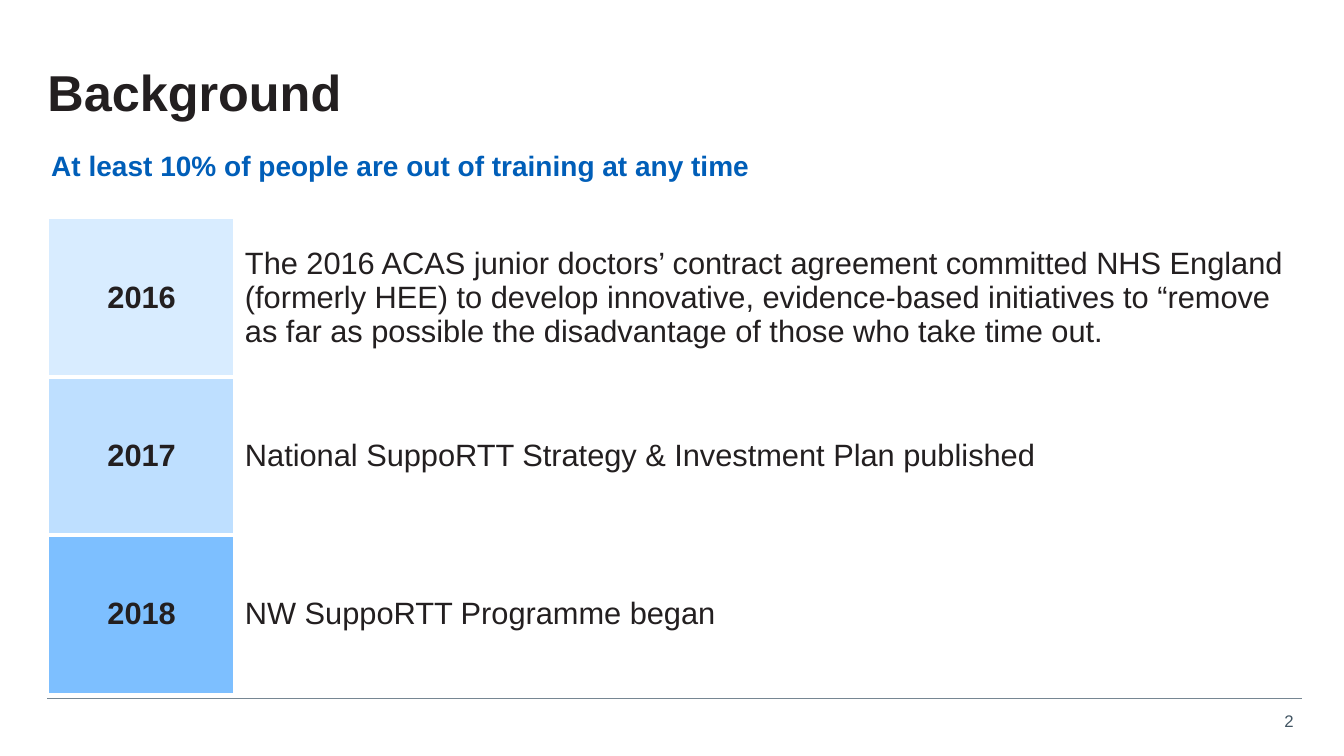
from lxml.etree import SubElement
from pptx import Presentation
from pptx.dml.color import RGBColor
from pptx.enum.shapes import MSO_CONNECTOR as Connector
from pptx.enum.text import MSO_ANCHOR as Anchor, MSO_AUTO_SIZE as AutoSize, PP_ALIGN as Align
from pptx.oxml.ns import qn
from pptx.util import Inches, Pt

WIDTH, HEIGHT = 13.33, 7.5
MARGIN = 0.47
TABLE_LEFT, TABLE_TOP = 0.48, 2.17
YEAR_WIDTH, EVENT_WIDTH, ROW_HEIGHT = 1.85, 10.72, 1.57
INK, BLUE, SLATE, RULE, WHITE = "231F20", "005EB8", "425563", "768692", "FFFFFF"

TIMELINE = [
    ("2016", "D8ECFF", "The 2016 ACAS junior doctors’ contract agreement committed NHS England "
     "(formerly HEE) to develop innovative, evidence-based initiatives to “remove as far as "
     "possible the disadvantage of those who take time out."),
    ("2017", "BEDFFF", "National SuppoRTT Strategy & Investment Plan published"),
    ("2018", "7DBFFF", "NW SuppoRTT Programme began"),
]


def paint(target, colour):
    """Give a font, fill or line colour object a hex colour."""
    target.rgb = RGBColor.from_string(colour)


def write(frame, text, size, colour, bold=False, align=Align.LEFT):
    """Fill a text frame with one formatted paragraph."""
    para = frame.paragraphs[0]
    para.text = text
    para.alignment = align
    para.font.name = "Arial"
    para.font.size = Pt(size)
    para.font.bold = bold
    paint(para.font.color, colour)
    return para


def add_title(page, text):
    """Place and format the title placeholder."""
    title = page.shapes.title
    title.left, title.top = Inches(MARGIN), Inches(MARGIN)
    title.width, title.height = Inches(WIDTH - 0.86), Inches(0.95)
    frame = title.text_frame
    frame.margin_left = frame.margin_right = frame.margin_top = frame.margin_bottom = 0
    frame.vertical_anchor = Anchor.MIDDLE
    frame.auto_size = AutoSize.NONE
    write(frame, text, 36, INK, bold=True).line_spacing = 0.9


def add_label(page, text, left, top, width, height, size, colour, **style):
    """Add an unwrapped single-line text box."""
    box = page.shapes.add_textbox(Inches(left), Inches(top), Inches(width), Inches(height))
    box.text_frame.word_wrap = False
    write(box.text_frame, text, size, colour, **style)


def add_rule(page, left, right, top):
    """Add the thin horizontal footer line."""
    rule = page.shapes.add_connector(
        Connector.STRAIGHT, Inches(left), Inches(top), Inches(right), Inches(top))
    paint(rule.line.color, RULE)
    rule.line.width = Pt(0.5)
    SubElement(rule._element.spPr, qn("a:effectLst"))


def add_borders(cell, sides):
    """Draw white three-point borders on the given sides of a cell."""
    properties = cell._tc.get_or_add_tcPr()
    for side in sides:
        border = SubElement(properties, qn(f"a:ln{side}"), w=str(Pt(3)))
        fill = SubElement(border, qn("a:solidFill"))
        SubElement(fill, qn("a:srgbClr"), val=WHITE)


def add_timeline(page, entries):
    """Add a table with a shaded year and an event in each row."""
    table = page.shapes.add_table(
        len(entries), 2, Inches(TABLE_LEFT), Inches(TABLE_TOP),
        Inches(YEAR_WIDTH + EVENT_WIDTH), Inches(ROW_HEIGHT * len(entries))).table
    table.first_row = table.horz_banding = False
    for column, width in zip(table.columns, (YEAR_WIDTH, EVENT_WIDTH)):
        column.width = Inches(width)
    for index, (year, shade, event) in enumerate(entries):
        table.rows[index].height = Inches(ROW_HEIGHT)
        year_cell, event_cell = table.cell(index, 0), table.cell(index, 1)
        across = ("T" if index else "") + ("B" if index < len(entries) - 1 else "")
        add_borders(year_cell, "R" + across)
        add_borders(event_cell, "L" + across)
        year_cell.fill.solid()
        paint(year_cell.fill.fore_color, shade)
        event_cell.fill.background()
        write(year_cell.text_frame, year, 22, INK, bold=True, align=Align.CENTER)
        write(event_cell.text_frame, event, 22, INK)
        year_cell.vertical_anchor = event_cell.vertical_anchor = Anchor.MIDDLE


def main():
    """Build and save the slide."""
    deck = Presentation()
    deck.slide_width, deck.slide_height = Inches(WIDTH), Inches(HEIGHT)
    page = deck.slides.add_slide(deck.slide_layouts[5])
    add_title(page, "Background")
    add_label(page, "At least 10% of people are out of training at any time",
              0.41, 1.42, 7.25, 0.44, 20, BLUE, bold=True)
    add_timeline(page, TIMELINE)
    add_rule(page, MARGIN, WIDTH - 0.42, 6.93)
    add_label(page, "2", 12.52, 7, 0.41, 0.3, 12, SLATE, align=Align.RIGHT)
    deck.save("out.pptx")


if __name__ == "__main__":
    main()
